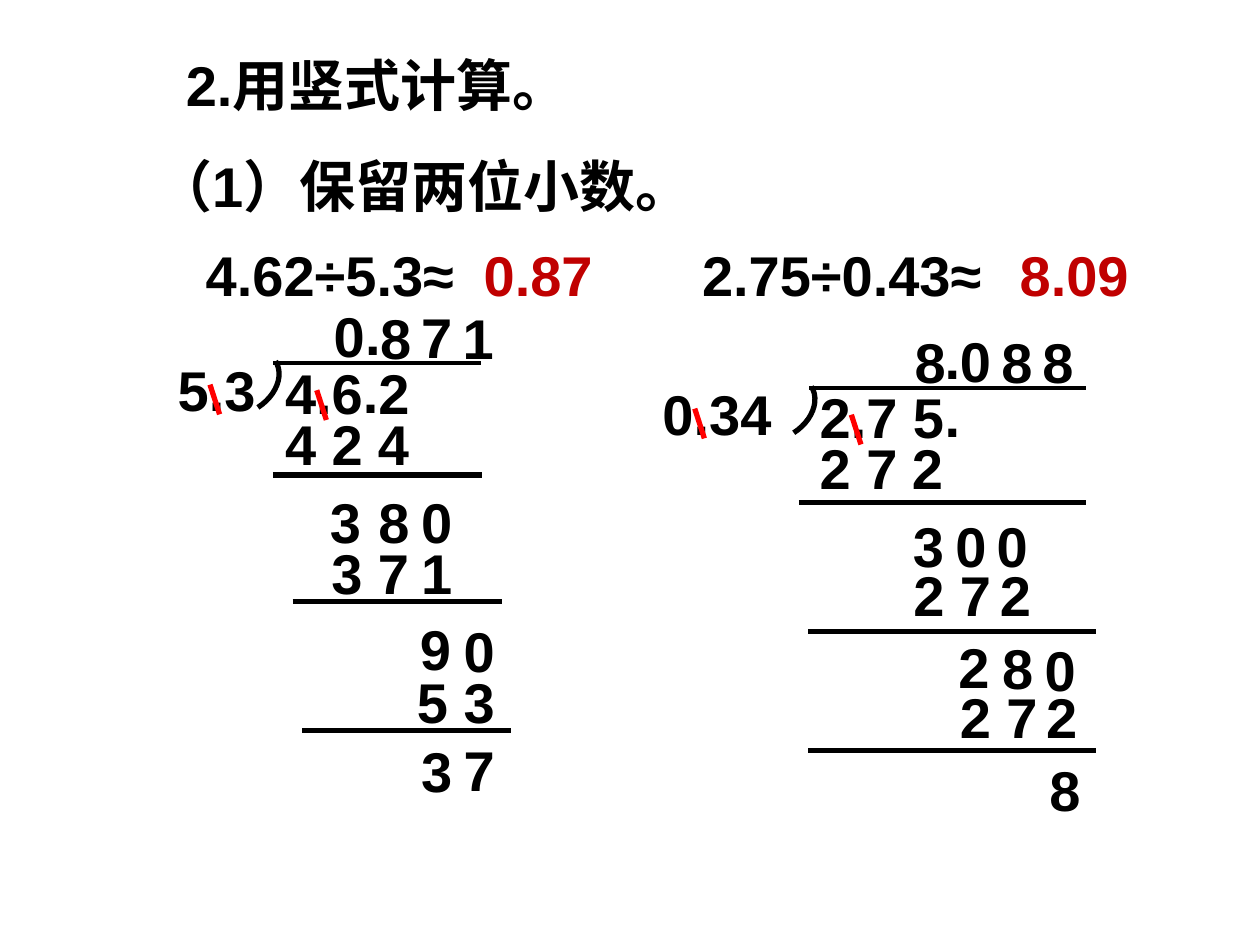
from lxml import etree
from pptx import Presentation
from pptx.dml.color import RGBColor
from pptx.enum.shapes import MSO_CONNECTOR, MSO_SHAPE
from pptx.enum.text import MSO_AUTO_SIZE
from pptx.oxml.ns import qn
from pptx.util import Pt

BLACK = RGBColor(0x00, 0x00, 0x00)
RED = RGBColor(0xFF, 0x00, 0x00)
DARK_RED = RGBColor(0xC0, 0x00, 0x00)
STRAIGHT = MSO_CONNECTOR.STRAIGHT
ARC = MSO_SHAPE.ARC
GROW = MSO_AUTO_SIZE.SHAPE_TO_FIT_TEXT
FONT = {"name": "Arial", "size": Pt(32), "bold": True}
BOX_HEIGHT = 46
DIGIT_WIDTH = 28.2
PAIR_WIDTH = 68
HANGING = 40.5
RULE = None

HEADINGS = (
    (110.5, 133.9, 204.5, "4.62÷5.3≈"),
    (394.1, 133.9, 198.7, "2.75÷0.43≈"),
    (99.1, 25.2, 368.6, "2.用竖式计算。"),
    (82.1, 82.8, 368.6, "（1）保留两位小数。"),
)

LEFT_DIVISION = {
    "divisor": ("5.3", 94.5, 199.4, 67.7),
    "dividend": ("4.6 2", 155.8, 201.3),
    "bar": (156.2, 207.4, 118.8),
    "rule_width": 119.3,
    "answer": (269.3, "0.87"),
    "steps": (
        (200.2, 200.9, "."),
        (183.6, 168.7, "0"), (201.6, 167.8, "."), (210.2, 169.9, "8"),
        (208.8, 230.4, "4"), (155.8, 230.4, "4 2"),
        (155.9, 271.4, RULE),
        (209.1, 275, "8"), (181.4, 275, "3"), (233.6, 275, "0"),
        (233.6, 169.1, "7"),
        (233.6, 304.1, "1"), (182.2, 304.1, "3 7"),
        (167.3, 343.7, RULE),
        (232.8, 347.5, "9"), (257.9, 348.7, "0"), (257.3, 170.1, "1"),
        (257.9, 378, "3"), (231.1, 378, "5"),
        (172.8, 417.6, RULE),
        (257.9, 416.8, "7"), (233.5, 417.4, "3"),
    ),
}

RIGHT_DIVISION = {
    "divisor": ("0.34", 371.5, 213.1, 96.5),
    "dividend": ("2.7 5", 461.3, 215.3),
    "bar": (462.4, 221.9, 158.4),
    "rule_width": 164.3,
    "answer": (575.6, "8.09"),
    "steps": (
        (532.7, 214.6, "."), (532.7, 181.4, "."),
        (515.5, 183.6, "8"),
        (514, 244.1, "2"), (461.3, 244.1, "2 7"),
        (456.5, 287.3, RULE),
        (514.6, 288.7, "3"), (538.8, 288.7, "0"),
        (541.4, 183.3, "0"), (565.1, 183.6, "8"), (562.4, 288.7, "0"),
        (564.3, 316.8, "2"), (514.8, 316.8, "2 7"),
        (462, 360.7, RULE),
        (565.5, 358.2, "8"), (540.6, 357.7, "2"), (589.9, 359.4, "0"),
        (588.5, 183.6, "8"),
        (590.7, 386.6, "2"), (541.4, 386.6, "2 7"),
        (462, 428.7, RULE),
        (592.6, 428.4, "8"),
    ),
}


def add_text(shapes, x, y, width, text, color=BLACK, hanging=0):
    """Add a one-line text box."""
    sp = shapes.add_textbox(Pt(x), Pt(y), Pt(width), Pt(BOX_HEIGHT))
    tf = sp.text_frame
    tf.word_wrap = True
    tf.auto_size = GROW
    p = tf.paragraphs[0]
    if hanging:
        properties = p._p.get_or_add_pPr()
        properties.set("marL", str(Pt(hanging)))
        properties.set("indent", str(-Pt(hanging)))
    r = p.add_run()
    r.text = text
    for key, value in FONT.items():
        setattr(r.font, key, value)
    r.font.color.rgb = color


def add_line(shapes, x, y, dx, dy=0, color=BLACK, weight=3):
    """Add a straight line from a start point and an extent."""
    line = shapes.add_connector(STRAIGHT, Pt(x), Pt(y), Pt(x + dx), Pt(y + dy))
    line.line.color.rgb = color
    line.line.width = Pt(weight)
    etree.SubElement(line._element.spPr, qn("a:effectLst"))


def add_arc(shapes, x, y):
    """Add the curved side of a division bracket."""
    sp = shapes.add_shape(ARC, Pt(x), Pt(y), Pt(33.8), Pt(45.4))
    sp.rotation = 57.5
    sp.shadow.inherit = False
    sp.fill.background()
    sp.line.color.rgb = BLACK
    sp.line.width = Pt(3)


def add_strike(shapes, x, y):
    """Cross out a decimal point."""
    add_line(shapes, x, y, 5.5, 17, RED)


def add_division(shapes, division):
    """Add one worked long division and its rounded answer."""
    divisor, divisor_x, divisor_y, divisor_width = division["divisor"]
    dividend, x, y = division["dividend"]
    bar_x, bar_y, bar_width = division["bar"]
    bracket = shapes.add_group_shape().shapes
    add_line(bracket, bar_x, bar_y, bar_width, weight=2.25)
    add_arc(bracket, bar_x - 34.8, bar_y - 11.5)
    add_text(bracket, x, y, 102.2, dividend, hanging=HANGING)
    add_text(bracket, divisor_x, divisor_y, divisor_width, divisor,
             hanging=HANGING)
    add_strike(shapes, divisor_x + 25.5, divisor_y + 20.4)
    add_strike(shapes, x + 25.2, y + 21.7)
    for left, top, text in division["steps"]:
        if text is RULE:
            add_line(shapes, left, top, division["rule_width"])
        else:
            width = DIGIT_WIDTH if len(text) == 1 else PAIR_WIDTH
            add_text(shapes, left, top, width, text)
    answer_x, answer = division["answer"]
    add_text(shapes, answer_x, 133.9, 90.7, answer, DARK_RED, HANGING)


def main():
    """Build the slide and save it."""
    prs = Presentation()
    prs.slide_width, prs.slide_height = Pt(720), Pt(540)
    s = prs.slides.add_slide(prs.slide_layouts[6])
    for heading in HEADINGS:
        add_text(s.shapes, *heading, hanging=HANGING)
    for division in (LEFT_DIVISION, RIGHT_DIVISION):
        add_division(s.shapes, division)
    prs.save("out.pptx")


if __name__ == "__main__":
    main()
